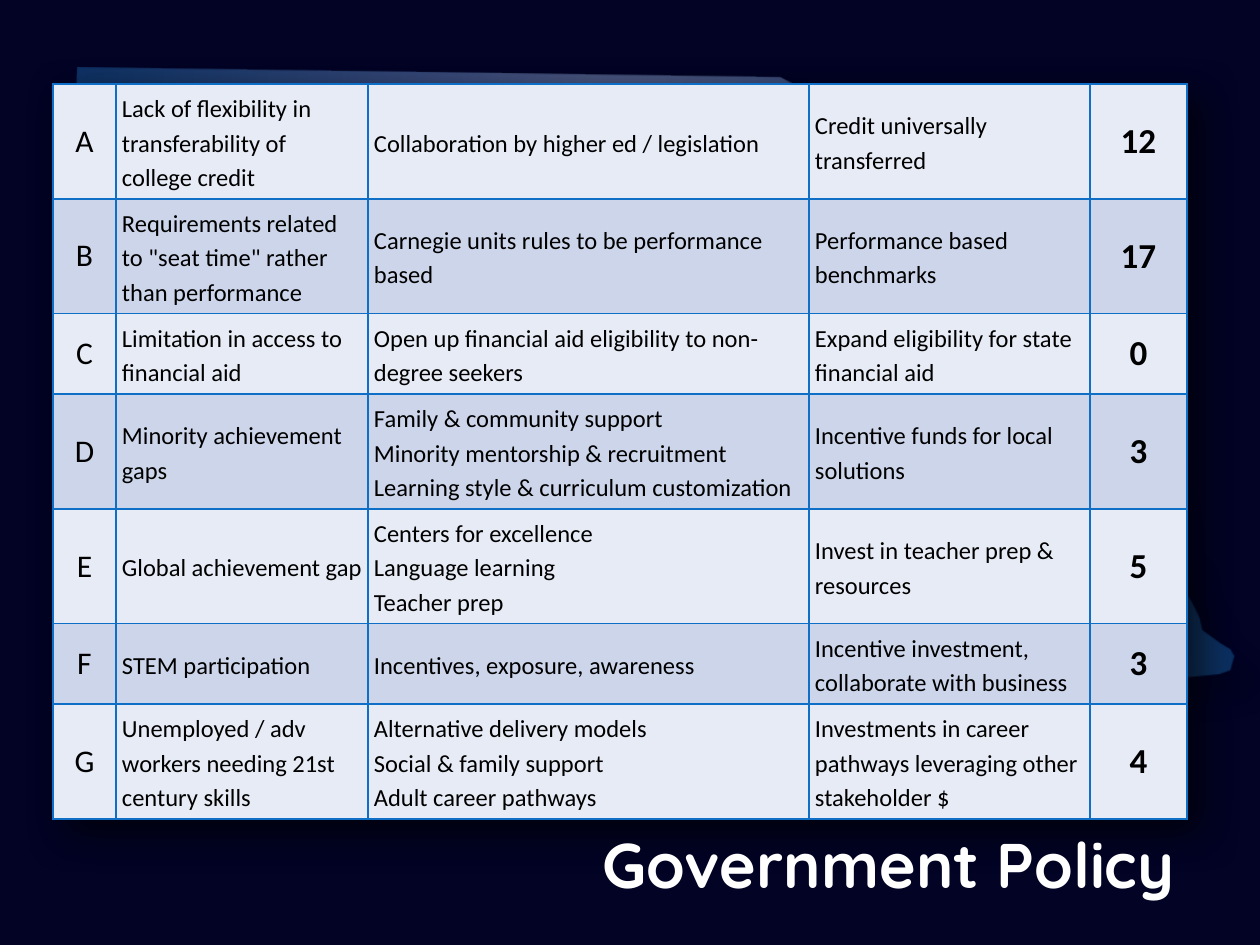
import math

from lxml import etree
from pptx import Presentation
from pptx.dml.color import RGBColor
from pptx.enum.shapes import MSO_SHAPE
from pptx.enum.text import MSO_ANCHOR, MSO_AUTO_SIZE, PP_ALIGN
from pptx.oxml import parse_xml
from pptx.oxml.ns import nsdecls, qn
from pptx.util import Pt

RECT = MSO_SHAPE.RECTANGLE
MIDDLE, TOP = MSO_ANCHOR.MIDDLE, MSO_ANCHOR.TOP
FIT_SHAPE = MSO_AUTO_SIZE.SHAPE_TO_FIT_TEXT
LEFT, CENTER, RIGHT = PP_ALIGN.LEFT, PP_ALIGN.CENTER, PP_ALIGN.RIGHT

EMU_PER_PX = 914400 / 126
TITLE_ONLY = 5
BORDER = "0F6FC6"
BANDS = ("E7EBF5", "CCD5EA")

# Table content
COLUMNS = (63, 252, 441, 281, 97)
LINE_HEIGHT, ROW_PADDING = 34, 12
ROWS = [  # line count, then the cells
    (3, "A", "Lack of flexibility in transferability of college credit",
     "Collaboration by higher ed / legislation",
     "Credit universally transferred", "12"),
    (3, "B", 'Requirements related to "seat time" rather than performance',
     "Carnegie units rules to be performance based",
     "Performance based benchmarks", "17"),
    (2, "C", "Limitation in access to financial aid",
     "Open up financial aid eligibility to non-degree seekers",
     "Expand eligibility for state financial aid", "0"),
    (3, "D", "Minority achievement gaps",
     "Family & community support\nMinority mentorship & recruitment\n"
     "Learning style & curriculum customization",
     "Incentive funds for local solutions", "3"),
    (3, "E", "Global achievement gap",
     "Centers for excellence\nLanguage learning\nTeacher prep",
     "Invest in teacher prep & resources", "5"),
    (2, "F", "STEM participation", "Incentives, exposure, awareness",
     "Incentive investment, collaborate with business", "3"),
    (3, "G", "Unemployed / adv workers needing 21st century skills",
     "Alternative delivery models\nSocial & family support\n"
     "Adult career pathways",
     "Investments in career pathways leveraging other stakeholder $", "4"),
]

# Text formats
LETTER = {"size": Pt(18), "bold": False}
BODY = {"size": Pt(14), "bold": False}
SCORE = {"size": Pt(20), "bold": True}
COLUMN_FORMATS = ((LETTER, CENTER, None), (BODY, LEFT, 1.15),
                  (BODY, LEFT, 1.15), (BODY, LEFT, 1.15),
                  (SCORE, CENTER, None))

# State outline as it lies on the slide, after its tilt
TILT = -2.7
MAP_CENTER = (642, 372)
MAP_POINTS = [
    (78, 68), (67, 467), (316, 479), (325, 679), (498, 682), (815, 684),
    (1051, 683), (1168, 679), (1220, 674), (1231, 670), (1235, 656),
    (1231, 649), (1221, 643), (1203, 630), (1200, 617), (1197, 611),
    (1192, 601), (1181, 585), (1178, 556), (1160, 543), (1159, 490),
    (1149, 471), (1142, 417), (1129, 397), (1128, 375), (1113, 352),
    (1109, 276), (1094, 267), (1081, 249), (1074, 220), (1060, 189),
    (1042, 178), (1019, 144), (1009, 141), (1011, 135), (966, 120),
    (953, 102), (913, 108), (898, 113), (838, 113), (822, 100), (781, 78),
]
MAP_STOPS = ((0, "0C599F"), (33, "6B8FCF"), (47, "91A9DD"),
             (53, "91A9DD"), (68, "6D90CF"), (100, "0C599F"))


def px(n):
    return round(n * EMU_PER_PX)


def rgb(color):
    return RGBColor.from_string(color)


def style_text(p, format_values, font, color, align, spacing=None):
    p.alignment = align
    if spacing:
        p.line_spacing = spacing
    for r in p.runs:
        for name, value in format_values.items():
            setattr(r.font, name, value)
        r.font.name = font
        r.font.color.rgb = rgb(color)


def shadow_xml(blur, distance, alpha):
    return parse_xml(
        f'<a:effectLst {nsdecls("a")}><a:outerShdw blurRad="{Pt(blur)}" '
        f'dist="{Pt(distance)}" dir="2700000" algn="tl" rotWithShape="0">'
        f'<a:srgbClr val="000000"><a:alpha val="{alpha * 1000}"/></a:srgbClr>'
        '</a:outerShdw></a:effectLst>')


def add_tint(slide, width, height, color, alpha):
    sp = slide.shapes.add_shape(RECT, 0, 0, px(width), px(height))
    sp.shadow.inherit = False
    sp.fill.solid()
    sp.fill.fore_color.rgb = rgb(color)
    clr = sp.element.spPr.find(qn("a:solidFill"))[0]
    etree.SubElement(clr, qn("a:alpha")).set("val", str(alpha * 1000))
    sp.line.fill.background()


def level_point(x, y):
    """Turn a tilted point back to where it lies before rotation."""
    a = math.radians(-TILT)
    cx, cy = MAP_CENTER
    dx, dy = x - cx, y - cy
    return (px(cx + dx * math.cos(a) - dy * math.sin(a)),
            px(cy + dx * math.sin(a) + dy * math.cos(a)))


def add_map(slide):
    points = [level_point(x, y) for x, y in MAP_POINTS]
    builder = slide.shapes.build_freeform(*points[0])
    builder.add_line_segments(points[1:], close=True)
    sp = builder.convert_to_shape()
    sp.rotation = TILT
    sp.line.fill.background()
    stops = "".join(
        f'<a:gs pos="{pos * 1000}"><a:srgbClr val="{color}">'
        '<a:alpha val="50000"/></a:srgbClr></a:gs>'
        for pos, color in MAP_STOPS)
    gradient = parse_xml(
        f'<a:gradFill {nsdecls("a")} rotWithShape="1"><a:gsLst>{stops}'
        '</a:gsLst><a:lin ang="0" scaled="0"/></a:gradFill>')
    spPr = sp.element.spPr
    spPr.find(qn("a:custGeom")).addnext(gradient)
    spPr.find(qn("a:ln")).addnext(shadow_xml(15, 18, 26))


def fill_cell(cell, text, column, band):
    tcPr = cell._tc.get_or_add_tcPr()
    for side in ("lnL", "lnR", "lnT", "lnB"):
        tcPr.append(parse_xml(
            f'<a:{side} {nsdecls("a")} w="{Pt(1)}"><a:solidFill>'
            f'<a:srgbClr val="{BORDER}"/></a:solidFill></a:{side}>'))
    cell.fill.solid()
    cell.fill.fore_color.rgb = rgb(band)
    cell.vertical_anchor = MIDDLE
    for side in ("left", "right", "top", "bottom"):
        setattr(cell, f"margin_{side}", px(6))
    cell.text = text
    format_values, align, spacing = COLUMN_FORMATS[column]
    for p in cell.text_frame.paragraphs:
        style_text(p, format_values, "Calibri", "000000", align, spacing)


def add_policy_table(slide, x, y):
    heights = [lines * LINE_HEIGHT + ROW_PADDING for lines, *_ in ROWS]
    frame = slide.shapes.add_table(len(ROWS), len(COLUMNS), px(x), px(y),
                                   px(sum(COLUMNS)), px(sum(heights)))
    table = frame.table
    table.first_row = False
    table._tbl.tblPr.insert(0, shadow_xml(23, 11, 65))
    for column, width in zip(table.columns, COLUMNS):
        column.width = px(width)
    for i, (_, *texts) in enumerate(ROWS):
        table.rows[i].height = px(heights[i])
        for j, text in enumerate(texts):
            fill_cell(table.cell(i, j), text, j, BANDS[i % 2])


def set_title(slide, text, x, y, w, h):
    title = slide.shapes.title
    title.left, title.top, title.width, title.height = map(px, (x, y, w, h))
    tf = title.text_frame
    tf.text = text
    tf.word_wrap = True
    tf.auto_size = FIT_SHAPE
    tf.vertical_anchor = TOP
    style_text(tf.paragraphs[0], {"size": Pt(36), "bold": True},
               "Quicksand", "FFFFFF", RIGHT)
    # Bring the title in front of the backdrop
    title.element.getparent().append(title.element)


def main():
    prs = Presentation()
    prs.slide_width, prs.slide_height = px(1260), px(945)
    slide = prs.slides.add_slide(prs.slide_layouts[TITLE_ONLY])

    # Backdrop
    slide.background.fill.solid()
    slide.background.fill.fore_color.rgb = rgb("000000")
    add_tint(slide, 1260, 945, "0A0D96", 25)
    add_map(slide)

    # Content
    add_policy_table(slide, 53, 84)
    set_title(slide, "Government Policy", 494, 819, 693, 89)
    prs.save("out.pptx")


if __name__ == "__main__":
    main()
